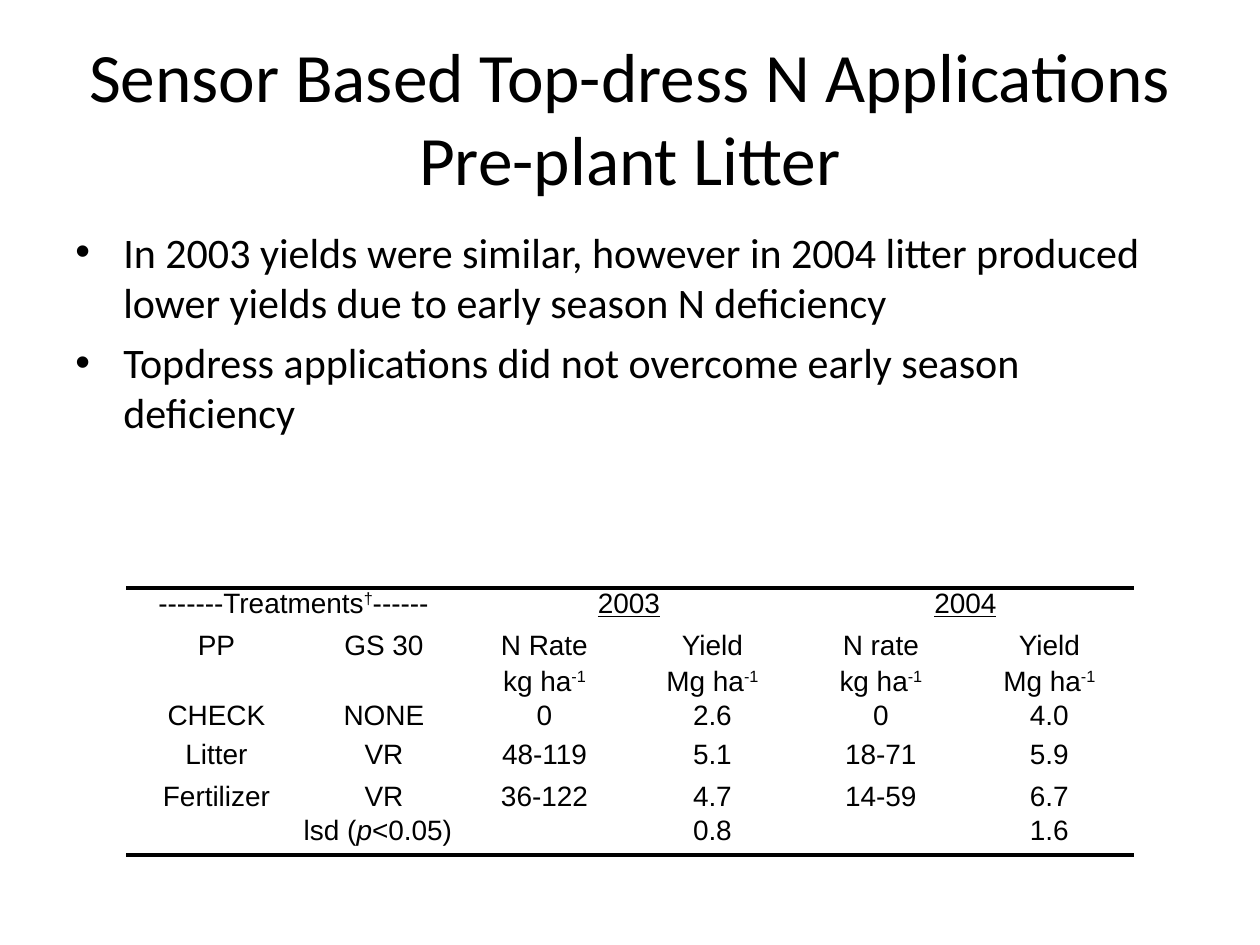
import pptx
import pptx.util
import pptx.dml.color
import pptx.enum.text
import pptx.oxml
import pptx.oxml.ns

PX = 914400 / 126
COLORS = {"text": "000000", "rule": "000000"}
NO_STYLE = "{2D5ABB26-0587-4C30-8999-92F81FD0307C}"
ALIGN = pptx.enum.text.PP_ALIGN

TITLE = "Sensor Based Top-dress N Applications Pre-plant Litter"
BULLETS = [
    "In 2003 yields were similar, however in 2004 litter produced lower yields due to early season N deficiency",
    "Topdress applications did not overcome early season deficiency",
]
RATE_UNIT = [("kg ha", ""), ("-1", "super")]
YIELD_UNIT = [("Mg ha", ""), ("-1", "super")]
TREATMENTS = [("-------Treatments", ""), ("†", "super"), ("------", "")]
LSD = [("lsd (", ""), ("p", "italic"), ("<0.05)", "")]
ROWS = [
    [TREATMENTS, "", [("2003", "underline")], "", [("2004", "underline")], ""],
    ["PP", "GS 30", "N Rate", "Yield", "N rate", "Yield"],
    ["", "", RATE_UNIT, YIELD_UNIT, RATE_UNIT, YIELD_UNIT],
    ["CHECK", "NONE", "0", "2.6", "0", "4.0"],
    ["Litter", "VR", "48-119", "5.1", "18-71", "5.9"],
    ["Fertilizer", "VR", "36-122", "4.7", "14-59", "6.7"],
    [LSD, "", "", "0.8", "", "1.6"],
]
COLUMN_WIDTHS = [181, 154, 167, 169, 168, 169]
ROW_HEIGHTS = [42, 36, 34, 39, 42, 34, 40]
MERGES = [(0, 0), (0, 2), (0, 4), (6, 0)]


def px(length):
    """Turn pixels into EMU."""
    return pptx.util.Emu(round(length * PX))


def set_font(paragraph, name, size):
    """Set the font of a whole paragraph."""
    paragraph.font.name = name
    paragraph.font.size = pptx.util.Pt(size)
    paragraph.font.color.rgb = pptx.dml.color.RGBColor.from_string(COLORS["text"])


def add_text_frame(slide, box):
    """Add a wrapping text box and return its text frame."""
    frame = slide.shapes.add_textbox(*map(px, box)).text_frame
    frame.word_wrap = True
    return frame


def add_title(slide, box):
    """Place the centred title."""
    frame = add_text_frame(slide, box)
    frame.vertical_anchor = pptx.enum.text.MSO_ANCHOR.MIDDLE
    paragraph = frame.paragraphs[0]
    paragraph.text = TITLE
    paragraph.alignment = ALIGN.CENTER
    set_font(paragraph, "Calibri", 39.6)


def add_bullets(slide, box):
    """Place the bulleted findings."""
    frame = add_text_frame(slide, box)
    frame.text = "\n".join(BULLETS)
    for paragraph in frame.paragraphs:
        paragraph.space_before = pptx.util.Pt(5.4)
        set_font(paragraph, "Calibri", 24)
        properties = paragraph._p.get_or_add_pPr()
        properties.set("marL", str(px(48)))
        properties.set("indent", str(px(-48)))
        for tag, attribute, value in (("buFont", "typeface", "Arial"), ("buChar", "char", "•")):
            bullet = properties.makeelement(pptx.oxml.ns.qn("a:" + tag), {attribute: value})
            properties.insert_element_before(bullet, "a:tabLst", "a:defRPr", "a:extLst")


def fill_cell(cell, content, alignment):
    """Write plain text or styled runs into a cell."""
    cell.fill.background()
    cell.margin_left = cell.margin_right = px(9)
    cell.margin_top = cell.margin_bottom = 0
    paragraph = cell.text_frame.paragraphs[0]
    paragraph.alignment = alignment
    set_font(paragraph, "Arial", 16)
    runs = [(content, "")] if isinstance(content, str) else content
    for text, style in runs:
        if not text:
            continue
        run = paragraph.add_run()
        run.text = text
        if style == "super":
            run.font._element.set("baseline", "30000")
        elif style == "italic":
            run.font.italic = True
        elif style == "underline":
            run.font.underline = True
    if runs == [("", "")]:
        paragraph._p.get_or_add_endParaRPr().set("sz", "1600")


def add_rule(cell, side):
    """Draw a 2.25 pt border on one side of a cell."""
    line = pptx.oxml.parse_xml(
        f'<a:{side} {pptx.oxml.ns.nsdecls("a")} w="{pptx.util.Pt(2.25)}"><a:solidFill>'
        f'<a:srgbClr val="{COLORS["rule"]}"/></a:solidFill></a:{side}>'
    )
    cell._tc.get_or_add_tcPr().insert(0, line)


def add_yield_table(slide, left, top):
    """Place the table of treatments, rates and yields."""
    size = sum(COLUMN_WIDTHS), sum(ROW_HEIGHTS)
    frame = slide.shapes.add_table(len(ROWS), len(COLUMN_WIDTHS), *map(px, (left, top, *size)))
    table = frame.table
    table.first_row = table.horz_banding = False
    table._tbl.tblPr.find(pptx.oxml.ns.qn("a:tableStyleId")).text = NO_STYLE
    for column, width in zip(table.columns, COLUMN_WIDTHS):
        column.width = px(width)
    for row, height in zip(table.rows, ROW_HEIGHTS):
        row.height = px(height)
    for row_index, contents in enumerate(ROWS):
        for column_index, content in enumerate(contents):
            cell = table.cell(row_index, column_index)
            fill_cell(cell, content, ALIGN.RIGHT if content is LSD else ALIGN.CENTER)
            if row_index == 0:
                add_rule(cell, "lnT")
            elif row_index == len(ROWS) - 1:
                add_rule(cell, "lnB")
    for row_index, column_index in MERGES:
        table.cell(row_index, column_index).merge(table.cell(row_index, column_index + 1))


def main():
    """Build and save the slide."""
    presentation = pptx.Presentation()
    presentation.slide_width, presentation.slide_height = px(1260), px(945)
    slide = presentation.slides.add_slide(presentation.slide_layouts[6])
    add_title(slide, (63, 38, 1134, 157))
    add_bullets(slide, (63, 220, 1134, 624))
    add_yield_table(slide, 126, 588)
    presentation.save("out.pptx")


if __name__ == "__main__":
    main()
